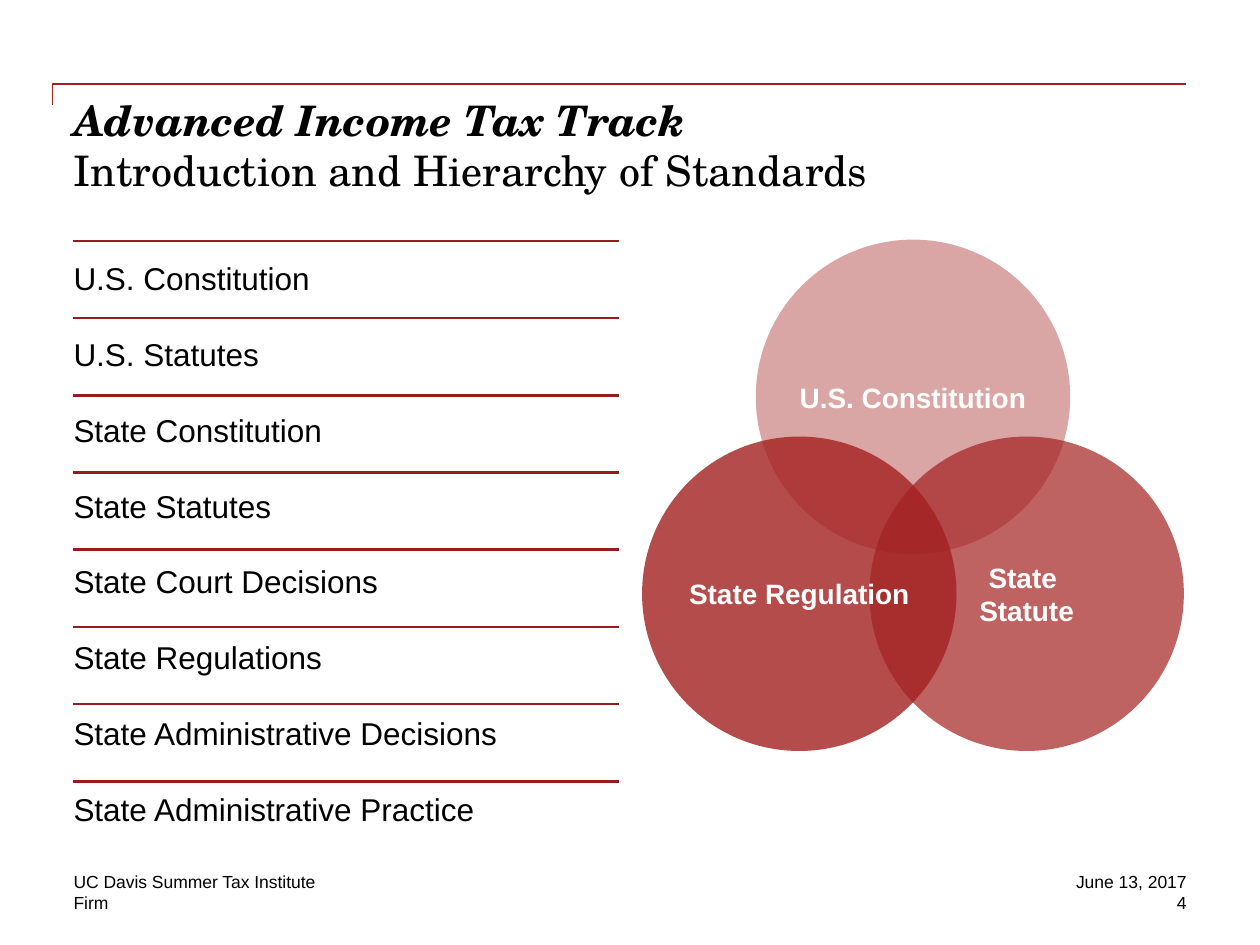
import math
import pptx
import pptx.util
import pptx.dml.color
import pptx.enum.shapes
import pptx.enum.text
import pptx.oxml.ns
import lxml.etree

TITLE = [("Advanced Income Tax Track", True),
         ("Introduction and Hierarchy of Standards", False)]
LEVELS = ["U.S. Constitution", "U.S. Statutes", "State Constitution",
          "State Statutes", "State Court Decisions", "State Regulations",
          "State Administrative Decisions", "State Administrative Practice"]
CIRCLES = [("U.S. Constitution", -90, 40), ("State \vStatute", 30, 70),
           ("State Regulation", 150, 80)]
FOOT = [("UC Davis Summer Tax Institute", 7, 83, "LEFT"),
        ("Firm", 7, 85, "LEFT"),
        ("June 13, 2017", 93, 83, "RIGHT"),
        ("4", 93, 85, "RIGHT")]
THEME = {"head": "TeX Gyre Schola", "body": "Arial", "ink": "000000",
         "pale": "FFFFFF", "red": "A32020", "rule": "941D1D",
         "title": 24, "item": 18, "label": 16, "foot": 10}
COLS, ROWS = 120, 90
LEFT, RIGHT = 7, 113
TOP, GAP = 22.95, 7.35
MID, REACH, SIZE = (86.95, 50.3), 12.5, 29.95

ALIGN = pptx.enum.text.PP_ALIGN
KIND = pptx.enum.shapes
deck = pptx.Presentation()
deck.slide_width = pptx.util.Inches(10)
deck.slide_height = pptx.util.Inches(7.5)
slide = deck.slides.add_slide(deck.slide_layouts[6])
shapes = slide.shapes


def col(n):
    return round(deck.slide_width * n / COLS)


def row(n):
    return round(deck.slide_height * n / ROWS)


def grid(x, y, w, h):
    return col(x), row(y), col(w), row(h)


def tint(name):
    return pptx.dml.color.RGBColor.from_string(THEME[name])


def style(para, face, size, ink="ink", bold=False, slant=False):
    font = para.font
    font.name, font.size = THEME[face], pptx.util.Pt(THEME[size])
    font.bold, font.italic = bold, slant
    font.color.rgb = tint(ink)


def write(x, y, w, h):
    frame = shapes.add_textbox(*grid(x, y, w, h)).text_frame
    frame.word_wrap = True
    frame.margin_left = frame.margin_right = 0
    frame.margin_top = frame.margin_bottom = 0
    return frame


def edge():
    form = shapes.build_freeform(col(5), row(10), 1.0)
    form.add_line_segments([(col(5), row(8)), (col(RIGHT), row(8))], close=False)
    line = form.convert_to_shape()
    line.shadow.inherit = False
    line.fill.background()
    line.line.color.rgb = tint("red")
    line.line.width = pptx.util.Pt(1)


def head():
    frame = write(LEFT, 9, RIGHT - LEFT, 10)
    for i, (text, strong) in enumerate(TITLE):
        para = frame.add_paragraph() if i else frame.paragraphs[0]
        para.text = text
        style(para, "head", "title", bold=strong, slant=strong)


def ladder():
    for i, text in enumerate(LEVELS):
        y = row(TOP + i * GAP)
        rule = shapes.add_connector(KIND.MSO_CONNECTOR.STRAIGHT,
                                    col(LEFT), y, col(59), y)
        rule.line.color.rgb = tint("rule")
        rule.line.width = pptx.util.Pt(1.5)
        lxml.etree.SubElement(rule._element.spPr,
                              pptx.oxml.ns.qn("a:effectLst"))
        para = write(LEFT, 25.1 + i * 7.22, 52, 3.25).paragraphs[0]
        para.text = text
        para.line_spacing = 0.9
        style(para, "body", "item")


def venn():
    for text, turn, alpha in CIRCLES:
        x = MID[0] + REACH * math.cos(math.radians(turn)) - SIZE / 2
        y = MID[1] + REACH * math.sin(math.radians(turn)) - SIZE / 2
        disc = shapes.add_shape(KIND.MSO_SHAPE.OVAL, *grid(x, y, SIZE, SIZE))
        disc.shadow.inherit = False
        disc.fill.solid()
        disc.fill.fore_color.rgb = tint("red")
        shade = next(disc._element.spPr.iter(pptx.oxml.ns.qn("a:srgbClr")))
        lxml.etree.SubElement(shade, pptx.oxml.ns.qn("a:alpha"),
                              val=str(alpha * 1000))
        disc.line.fill.background()
        frame = disc.text_frame
        frame.word_wrap = False
        frame.vertical_anchor = pptx.enum.text.MSO_ANCHOR.MIDDLE
        para = frame.paragraphs[0]
        para.text = text
        para.alignment = ALIGN.CENTER
        style(para, "body", "label", "pale", bold=True)


def foot():
    for text, x, y, side in FOOT:
        para = write(x, y, 20 if side == "RIGHT" else 69, 2).paragraphs[0]
        para.text = text
        para.alignment = ALIGN[side]
        style(para, "body", "foot")


edge()
head()
ladder()
venn()
foot()
deck.save("out.pptx")
